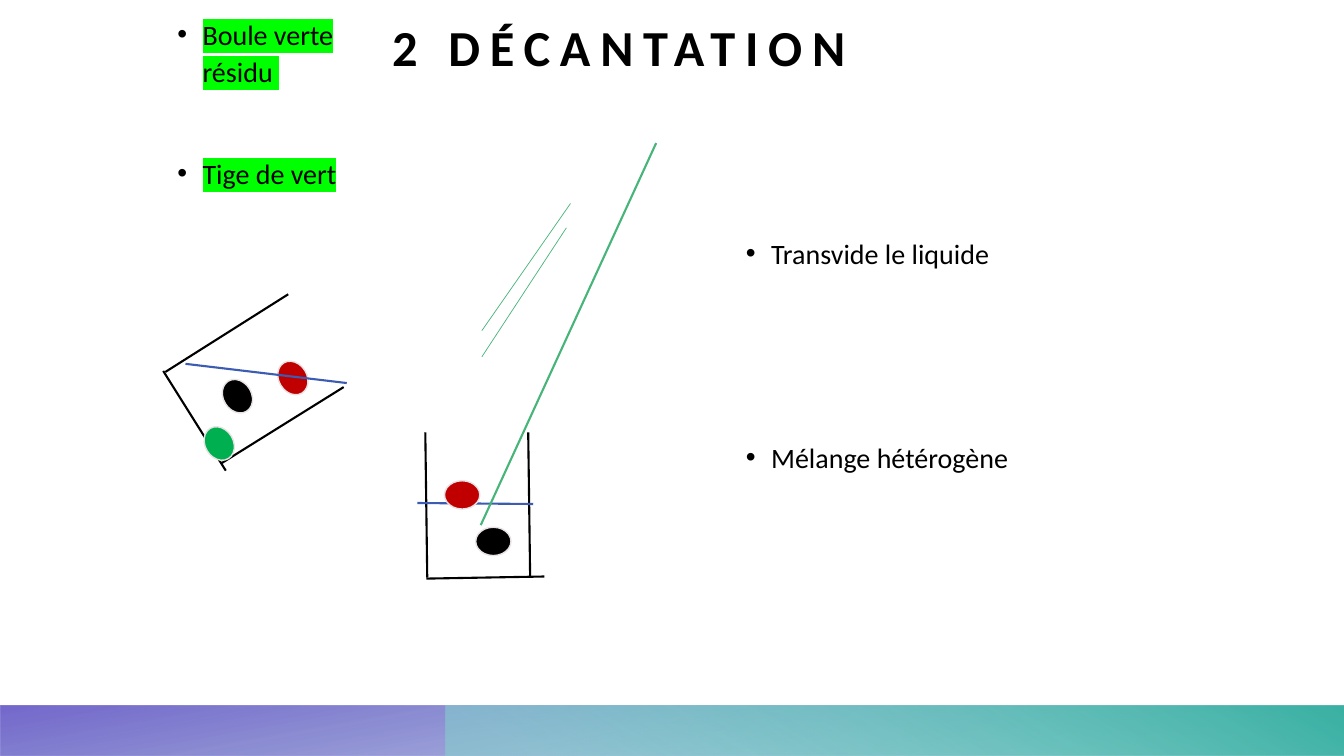
"""Build the slide on decantation: two beakers, a glass rod and their labels."""
from lxml import etree
from pptx import Presentation
from pptx.dml import color
from pptx.enum import shapes, text
from pptx.oxml import ns
from pptx.util import Pt

COLOURS = {
    "black": "000000", "red": "C00000", "green": "00B050", "outline": "E8E2E5",
    "water": "3B5CB1", "rod": "47B47A", "highlight": "00FF00",
    "violet": "5C4DC3", "mint": "84D6CD", "teal": "3BB1A4",
}
FONT = "Calibri"
BALL_SIZE = (25.2, 20.2)


def rgb(name):
    """Return the named colour."""
    return color.RGBColor.from_string(COLOURS[name])


def sub(parent, tag, **attributes):
    """Append a DrawingML element."""
    values = {key: str(value) for key, value in attributes.items()}
    return etree.SubElement(parent, ns.qn(tag), values)


def add_text(slide, box, entries, size=20, bold=False, spacing=0, bullet=True,
             highlight=None, gap=10, line_spacing=1.1, anchor=text.MSO_ANCHOR.TOP):
    """Add a text box with one paragraph per entry, set apart by gap."""
    frame = slide.shapes.add_textbox(*map(Pt, box)).text_frame
    frame.word_wrap = True
    frame.vertical_anchor = anchor
    frame.margin_left = frame.margin_right = frame.margin_top = frame.margin_bottom = 0
    for index, entry in enumerate(entries):
        paragraph = frame.add_paragraph() if index else frame.paragraphs[0]
        paragraph.line_spacing = line_spacing
        paragraph.space_before = Pt(gap if index else 0)
        run = paragraph.add_run()
        run.text = entry
        run.font.size = Pt(size)
        run.font.bold = bold
        run.font.color.rgb = rgb("black")
        properties = run.font._element
        if highlight:
            sub(sub(properties, "a:highlight"), "a:srgbClr", val=COLOURS[highlight])
        run.font.name = FONT
        if spacing:
            properties.set("spc", str(spacing * 100))
        if bullet:
            layout = paragraph._p.get_or_add_pPr()
            layout.set("marL", str(Pt(18)))
            layout.set("indent", str(-Pt(18)))
            sub(layout, "a:buFont", typeface="Arial")
            sub(layout, "a:buChar", char="•")


def add_band(slide, left, width, angle, stops, rotation=0):
    """Add a mirrored footer band with a translucent gradient."""
    band = slide.shapes.add_shape(
        shapes.MSO_SHAPE.RECTANGLE, Pt(left), Pt(504), Pt(width), Pt(36))
    band.shadow.inherit = False
    band.line.fill.background()
    band.rotation = rotation
    properties = band._element.spPr
    properties.xfrm.set("flipH", "1")
    gradient = etree.Element(ns.qn("a:gradFill"), rotWithShape="1")
    stop_list = sub(gradient, "a:gsLst")
    for position, name, opacity in stops:
        stop = sub(stop_list, "a:gs", pos=position * 1000)
        tint = sub(stop, "a:srgbClr", val=COLOURS[name])
        sub(tint, "a:alpha", val=opacity * 1000)
    sub(gradient, "a:lin", ang=angle * 60000, scaled=0)
    properties.find(ns.qn("a:prstGeom")).addnext(gradient)


def add_line(slide, start, end, name="black", width=1.5):
    """Add a straight line between two points."""
    line = slide.shapes.add_connector(
        shapes.MSO_CONNECTOR.STRAIGHT, *map(Pt, start + end))
    line.line.color.rgb = rgb(name)
    line.line.width = Pt(width)
    sub(line._element.spPr, "a:effectLst")


def add_ball(slide, left, top, name, rotation=0):
    """Add one oval particle."""
    ball = slide.shapes.add_shape(
        shapes.MSO_SHAPE.OVAL, Pt(left), Pt(top), *map(Pt, BALL_SIZE))
    ball.shadow.inherit = False
    ball.rotation = rotation
    ball.fill.solid()
    ball.fill.fore_color.rgb = rgb(name)
    ball.line.color.rgb = rgb("outline")
    ball.line.width = Pt(1)


def add_tilted_beaker(slide):
    """Draw the tilted beaker with its residue."""
    add_line(slide, (245.5, 276.5), (157.7, 331.2))
    add_line(slide, (205.9, 210.2), (118.1, 265.7))
    add_line(slide, (161.3, 336.2), (116.6, 265))
    add_ball(slide, 157, 272.9, "black", rotation=59)
    add_ball(slide, 144, 306.7, "green", rotation=59)
    add_ball(slide, 196.6, 259.9, "red", rotation=59)
    add_line(slide, (132.5, 259.9), (247.7, 273.6), "water")


def add_upright_beaker(slide):
    """Draw the upright beaker that receives the liquid."""
    for left in (303.8, 377.3):
        add_line(slide, (left, 308.9), (left + 1.4, 412.6))
    add_line(slide, (388.8, 411.8), (304.6, 413.3))
    add_line(slide, (298.1, 359.3), (380.9, 360), "water")
    add_ball(slide, 339.8, 376.6, "black")
    add_ball(slide, 317.5, 343.4, "red")


def add_rod(slide):
    """Draw the glass rod and the two thin strokes beside it."""
    add_line(slide, (407.5, 145.4), (344.2, 236.2), "rod", width=0.5)
    add_line(slide, (404.6, 162.7), (344.2, 254.9), "rod", width=0.5)
    add_line(slide, (468.7, 102.2), (343.4, 375.1), "rod")


def main():
    """Build and save the presentation."""
    presentation = Presentation()
    presentation.slide_width, presentation.slide_height = Pt(960), Pt(540)
    slide = presentation.slides.add_slide(presentation.slide_layouts[6])
    add_band(slide, 0, 960, 100, [(14, "water", 28), (100, "violet", 85)], rotation=180)
    add_band(slide, 318, 642, 240, [(9, "mint", 55), (99, "teal", 100)])
    add_text(slide, (280, -8.6, 442.8, 63.4), ["2 DÉCANTATION"], size=36, bold=True,
             spacing=7, bullet=False, line_spacing=1, anchor=text.MSO_ANCHOR.BOTTOM)
    add_text(slide, (532.8, 166.3, 381.6, 311.8),
             ["Transvide le liquide", "Mélange hétérogène"], gap=119.3)
    add_text(slide, (126.7, 10, 134.6, 133.2),
             ["Boule verte résidu ", "Tige de vert"], gap=46.4, highlight="highlight")
    add_tilted_beaker(slide)
    add_upright_beaker(slide)
    add_rod(slide)
    presentation.save("out.pptx")


if __name__ == "__main__":
    main()
